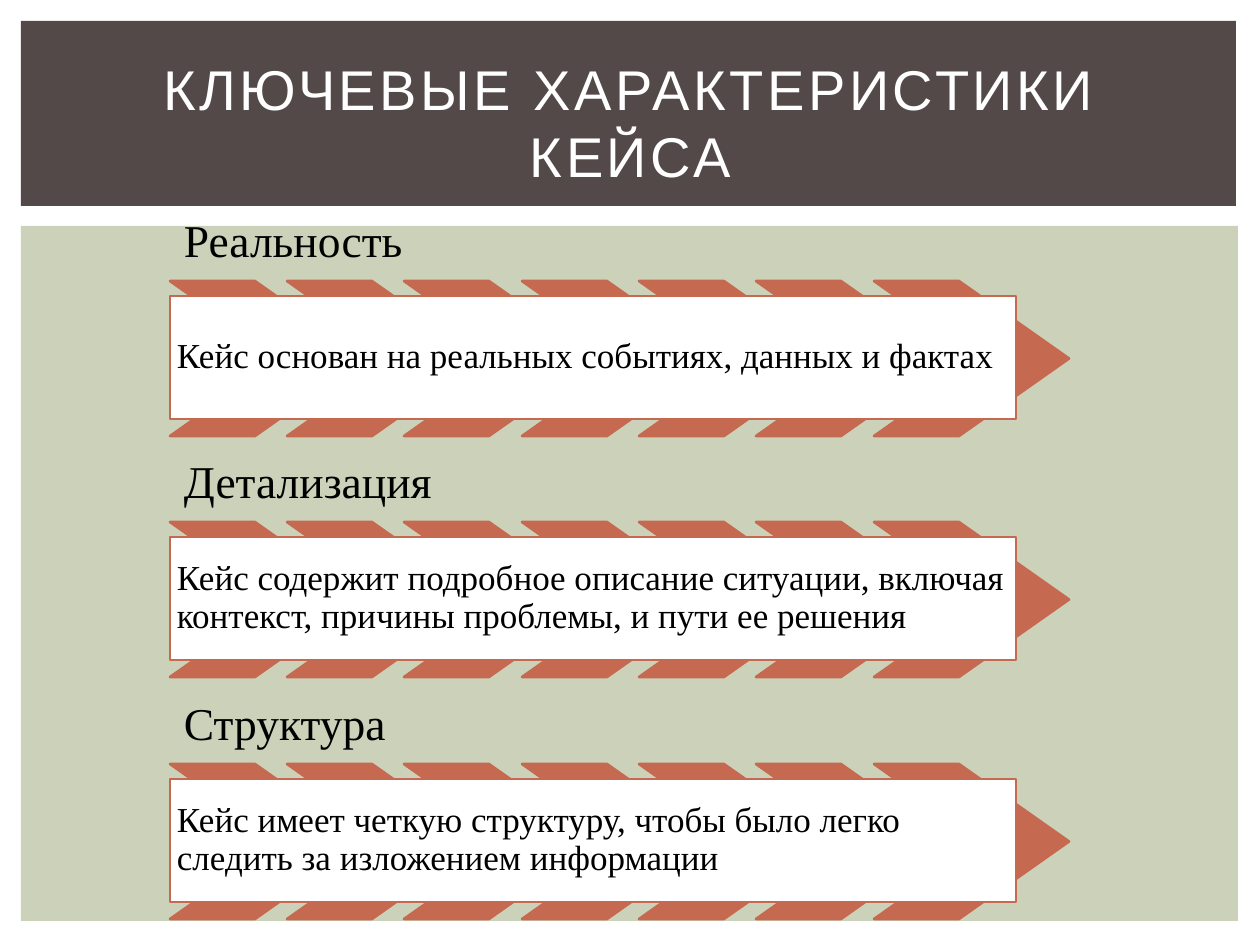
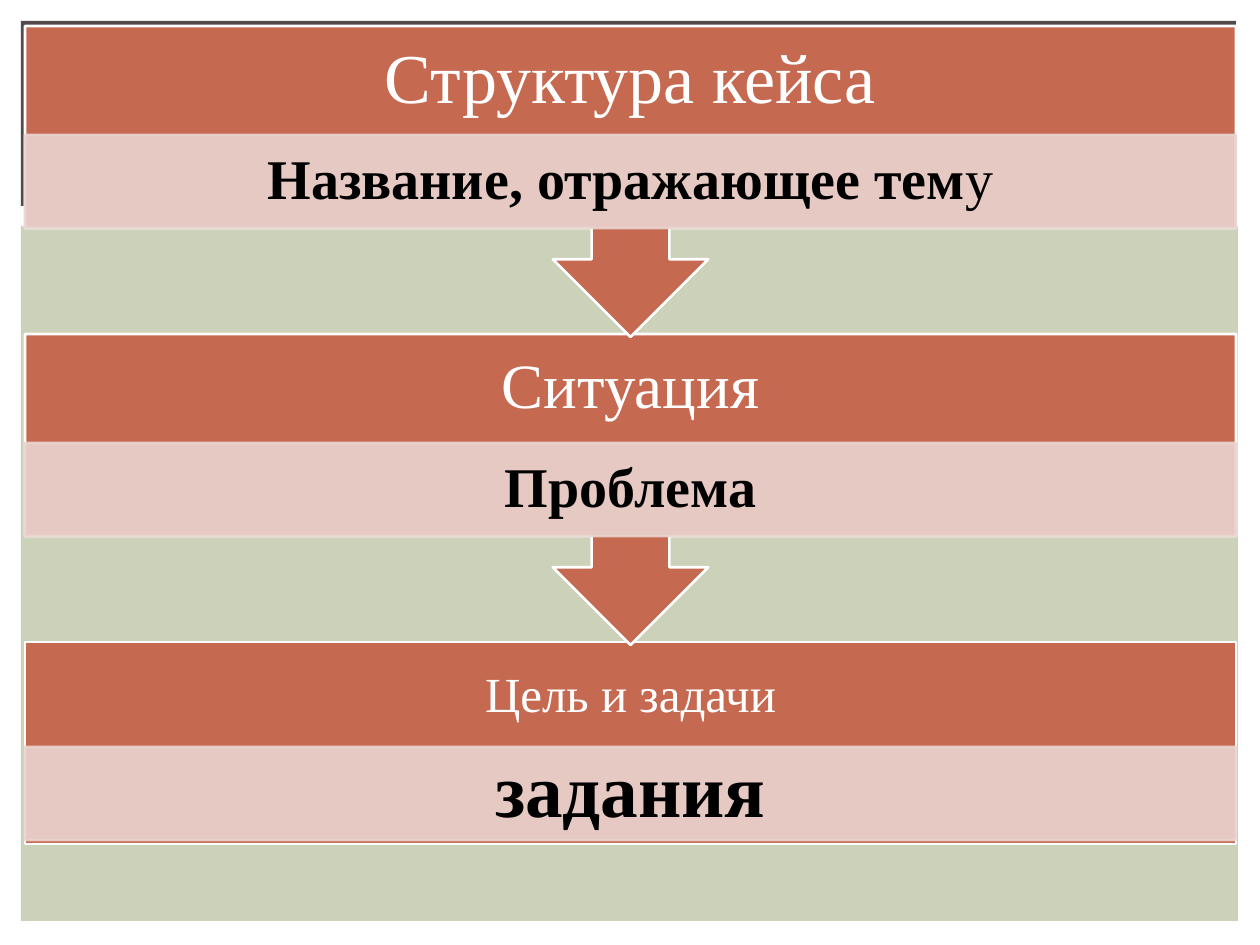
from lxml.etree import SubElement
from pptx import Presentation
from pptx.dml.color import RGBColor
from pptx.enum.shapes import MSO_SHAPE as Shape
from pptx.enum.text import MSO_ANCHOR as Anchor, PP_ALIGN as Align
from pptx.oxml.ns import qn
from pptx.util import Pt

EMU_PER_PX = 914400 / 126
COLORS = {
    "white": "FFFFFF",
    "black": "000000",
    "field": "CCD1B9",
    "band": "534949",
    "accent": "C66951",
    "pale": "EAD4D0",
}
SERIF = "Times New Roman"
SANS = "Arial"


def px(length):
    return round(length * EMU_PER_PX)


class SlideBuilder:
    def __init__(self):
        self.deck = Presentation()
        self.deck.slide_width, self.deck.slide_height = px(1260), px(945)
        self.page = None

    def new_page(self):
        self.page = self.deck.slides.add_slide(self.deck.slide_layouts[6])
        self.shape(Shape.RECTANGLE, (21, 226, 1217, 695), "field")
        self.shape(Shape.RECTANGLE, (21, 21, 1215, 185), "band")

    def shape(self, kind, place, fill, line=None, opacity=100):
        box = self.page.shapes.add_shape(kind, *map(px, place))
        box.shadow.inherit = False
        box.fill.solid()
        box.fill.fore_color.rgb = RGBColor.from_string(COLORS[fill])
        if line:
            box.line.color.rgb = RGBColor.from_string(COLORS[line])
            box.line.width = Pt(1.5)
        else:
            box.line.fill.background()
        if opacity < 100:
            for color in box._element.spPr.iter(qn("a:srgbClr")):
                SubElement(color, qn("a:alpha"), val=str(opacity * 1000))
        return box

    def text_box(self, place, text, size, **style):
        box = self.page.shapes.add_textbox(*map(px, place))
        return self.set_text(box, text, size, **style)

    def set_text(self, box, text, size, color="black", font=SERIF, align=Align.CENTER,
                 anchor=Anchor.MIDDLE, insets=(13, 6), bold=False, plain_end="",
                 spacing=0.9, tracking=0):
        frame = box.text_frame
        frame.word_wrap = True
        frame.vertical_anchor = anchor
        frame.margin_left = frame.margin_right = px(insets[0])
        frame.margin_top = frame.margin_bottom = px(insets[1])
        para = frame.paragraphs[0]
        para.alignment = align
        para.line_spacing = spacing
        para.font.name = font
        para.font.size = Pt(size)
        para.font.color.rgb = RGBColor.from_string(COLORS[color])
        para.font.bold = bold
        if tracking:
            para._p.pPr.find(qn("a:defRPr")).set("spc", str(tracking * 100))
        para.add_run().text = text
        if plain_end:
            span = para.add_run()
            span.text = plain_end
            span.font.bold = False
        return box

    def title(self, text):
        self.text_box((53, 49, 1155, 145), text, 32, color="white", font=SANS,
                      spacing=1.0, tracking=2)

    def feature(self, top, name, detail):
        left = 170
        self.text_box((left, top, 835, 76), name, 26, align=Align.LEFT,
                      anchor=Anchor.BOTTOM, insets=(14, 14))
        for index in range(7):
            chevron = self.shape(Shape.CHEVRON, (left + 704 * index // 6, top + 76, 195, 155),
                                 "accent", "accent")
            chevron.adjustments[0] = 0.71
        panel = self.shape(Shape.RECTANGLE, (left, top + 91, 846, 123), "white", "accent")
        self.set_text(panel, detail, 20, align=Align.LEFT, insets=(7, 7))

    def stage(self, top, head, head_size, head_inset, body, body_size,
              body_insets=(32, 5), body_offset=109, plain_end="", last=False):
        left, width = 25, 1211
        if last:
            self.shape(Shape.RECTANGLE, (left, top, width, 202), "accent", "white")
        else:
            callout = self.shape(Shape.UP_ARROW_CALLOUT, (left, top, width, 311),
                                 "accent", "white")
            callout.rotation = 180
        self.text_box((left, top, width, 109), head, head_size, color="white",
                      insets=(head_inset, head_inset))
        strip = self.shape(Shape.RECTANGLE, (left, top + body_offset, width, 93),
                           "pale", "pale", opacity=90)
        self.set_text(strip, body, body_size, insets=body_insets, bold=True,
                      plain_end=plain_end)


def build_features(builder):
    builder.new_page()
    features = [
        ("Реальность", "Кейс основан на реальных событиях, данных и фактах"),
        ("Детализация", "Кейс содержит подробное описание ситуации, включая контекст, "
                        "причины проблемы, и пути ее решения"),
        ("Структура", "Кейс имеет четкую структуру, чтобы было легко следить "
                      "за изложением информации"),
    ]
    for row, (name, detail) in enumerate(features):
        builder.feature(205 + 483 * row // 2, name, detail)
    builder.title("КЛЮЧЕВЫЕ ХАРАКТЕРИСТИКИ КЕЙСА")


def build_structure(builder):
    builder.new_page()
    first, step = 26, 308
    builder.stage(first + 2 * step, "Цель и задачи", 28, 28, "задания", 43,
                  body_insets=(42, 7), body_offset=105, last=True)
    builder.stage(first + step, "Ситуация", 36, 35, "Проблема", 32)
    builder.stage(first, "Структура кейса", 40, 39, "Название, отражающее тем", 32,
                  plain_end="у")


def main():
    builder = SlideBuilder()
    build_features(builder)
    build_structure(builder)
    builder.deck.save("out.pptx")


if __name__ == "__main__":
    main()
